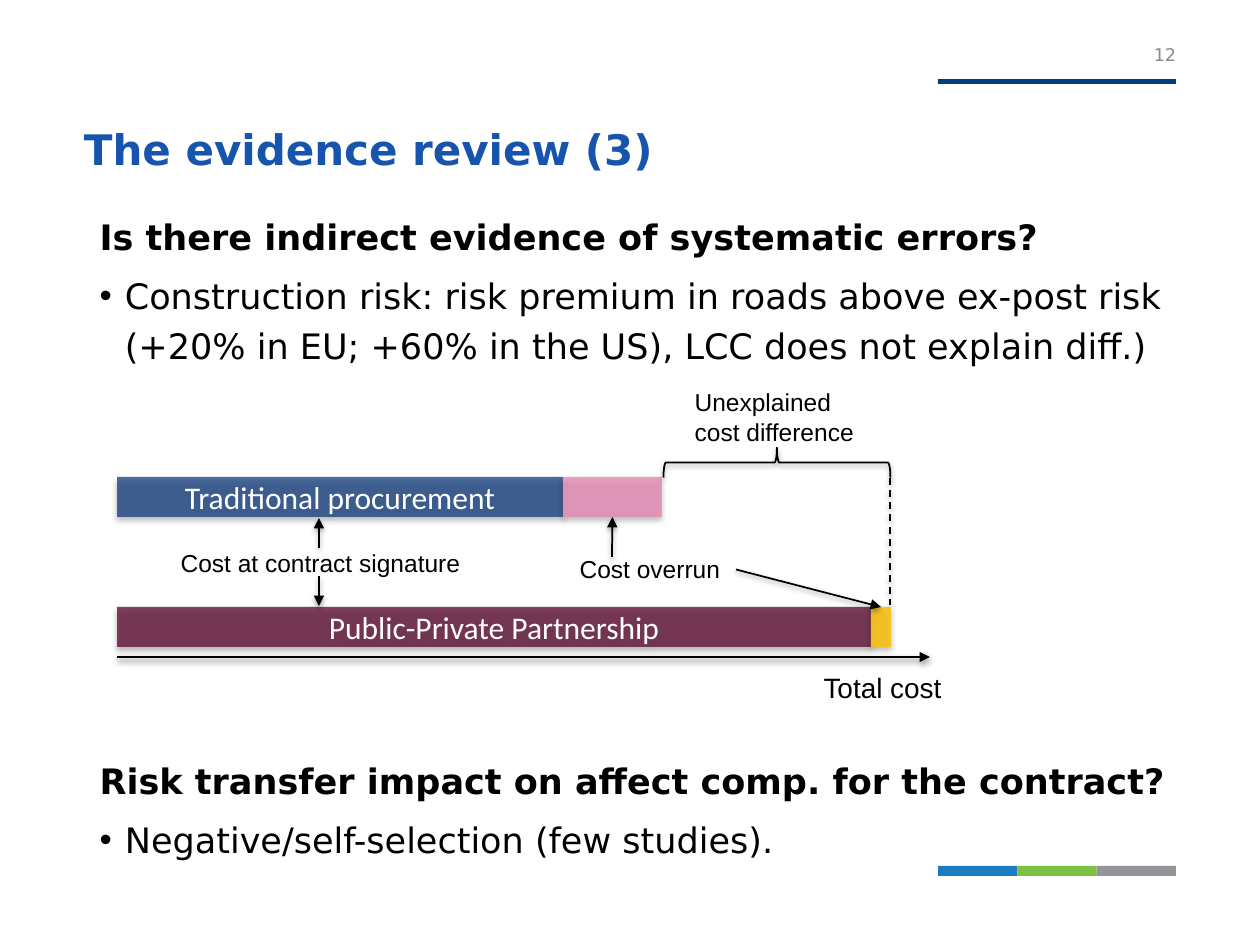
import pptx
import pptx.util
import pptx.dml.color
import pptx.enum.dml
import pptx.enum.shapes
import pptx.enum.text
import pptx.oxml
import pptx.oxml.ns

PX = 914400 // 126
COLORS = {
    "title": "1754AD", "text": "000000", "number": "898989", "white": "FFFFFF",
    "navy": "003E7E", "blue": "1C7CC2", "green": "7BC042", "grey": "939598",
    "traditional": "113D7E", "overrun": "E68BB5", "partnership": "621538", "gold": "FFC000",
}
HEADING_FONT, LABEL_FONT, BAR_FONT = "DejaVu Sans", "Arial", "Calibri"

TITLE = "The evidence review (3)"
PAGE_NUMBER = "12"
SECTIONS = [
    (197, 180, "Is there indirect evidence of systematic errors?",
     "Construction risk: risk premium in roads above ex-post risk (+20% in EU; +60% in the US), "
     "LCC does not explain diff.)"),
    (741, 125, "Risk transfer impact on affect comp. for the contract?",
     "Negative/self-selection (few studies)."),
]
BAR_LEFT, BAR_HEIGHT = 117, 40
BARS = [
    (477, [("traditional", 75, 446, "Traditional procurement"), ("overrun", 80, 99, "")]),
    (607, [("partnership", 80, 754, "Public-Private Partnership"), ("gold", 80, 20, "")]),
]
LABELS = [
    ("Total cost", 811, 664, 195, 47, 16),
    ("Cost overrun", 567, 548, 169, 43, 14),
    ("Cost at contract signature", 168, 542, 306, 43, 14),
    ("Unexplained cost difference", 682, 381, 197, 72, 14),
]
ARROWS = [
    (117, 657, 930, 657, 1.5),
    (319, 548, 319, 518, 1),
    (319, 576, 319, 606, 1),
]
FOOTER_STRIPES = ["blue", "green", "grey"]

Shapes = pptx.enum.shapes.MSO_SHAPE
Align = pptx.enum.text.PP_ALIGN
Anchor = pptx.enum.text.MSO_ANCHOR


def px(*values):
    return [round(value * PX) for value in values]


def rgb(name):
    return pptx.dml.color.RGBColor.from_string(COLORS[name])


def add_xml(parent, markup):
    head, rest = markup.split(" ", 1)
    element = pptx.oxml.parse_xml(f"{head} {pptx.oxml.ns.nsdecls('a')} {rest}")
    parent.append(element)


def add_shadow(item, blur, distance, alpha):
    properties = item._element.spPr
    for effect in properties.findall(pptx.oxml.ns.qn("a:effectLst")):
        properties.remove(effect)
    add_xml(properties, f'<a:effectLst ><a:outerShdw blurRad="{round(blur * 12700)}" '
            f'dist="{round(distance * 12700)}" dir="5400000" rotWithShape="0">'
            f'<a:srgbClr val="{COLORS["text"]}"><a:alpha val="{alpha * 1000}"/></a:srgbClr>'
            '</a:outerShdw></a:effectLst>')


def style(para, size, font, color, bold=False):
    for span in para.runs:
        span.font.size = pptx.util.Pt(size)
        span.font.name = font
        span.font.bold = bold
        span.font.color.rgb = rgb(color)


def add_text(page, text, place, size, font, color, anchor=Anchor.TOP, insets=(0, 0, 0, 0), bold=False):
    box = page.shapes.add_textbox(*px(*place))
    frame = box.text_frame
    frame.word_wrap = True
    frame.vertical_anchor = anchor
    (frame.margin_left, frame.margin_top, frame.margin_right, frame.margin_bottom) = px(*insets)
    frame.text = text
    style(frame.paragraphs[0], size, font, color, bold)
    return box


def add_rectangle(page, color, *place):
    shape = page.shapes.add_shape(Shapes.RECTANGLE, *px(*place))
    shape.shadow.inherit = False
    shape.fill.solid()
    shape.fill.fore_color.rgb = rgb(color)
    shape.line.fill.background()
    return shape


def add_bar(page, color, alpha, text, *place):
    bar = add_rectangle(page, color, *place)
    fill = bar._element.spPr.find(pptx.oxml.ns.qn("a:solidFill"))
    add_xml(fill[0], f'<a:alpha val="{alpha * 1000}"/>')
    add_shadow(bar, 3.5, 2.2, 32)
    if text:
        bar.text_frame.text = text
        bar.text_frame.vertical_anchor = Anchor.MIDDLE
        para = bar.text_frame.paragraphs[0]
        para.alignment = Align.CENTER
        style(para, 18, BAR_FONT, "white")
    return bar


def add_line(page, x1, y1, x2, y2, width=1, arrow=True):
    line = page.shapes.add_connector(pptx.enum.shapes.MSO_CONNECTOR.STRAIGHT, *px(x1, y1, x2, y2))
    line.line.color.rgb = rgb("text")
    line.line.width = pptx.util.Pt(width)
    if arrow:
        add_xml(line.line._get_or_add_ln(), '<a:tailEnd type="triangle"/>')
    else:
        line.line.dash_style = pptx.enum.dml.MSO_LINE.DASH
    add_shadow(line, 3.1, 1.6, 38)
    return line


def add_section(page, top, height, heading, bullet):
    box = add_text(page, heading, (87, top, 1090, height), 20, HEADING_FONT, "text",
                   insets=(0, 10, 0, 0), bold=True)
    first = box.text_frame.paragraphs[0]
    first._p.get_or_add_pPr().set("marL", str(px(12.6)[0]))
    para = box.text_frame.add_paragraph()
    para.text = bullet
    properties = para._p.get_or_add_pPr()
    properties.set("marL", str(px(37.8)[0]))
    properties.set("indent", str(px(-25.2)[0]))
    add_xml(properties, '<a:buFont typeface="Arial"/>')
    add_xml(properties, '<a:buChar char="•"/>')
    para.space_before = pptx.util.Pt(5)
    style(para, 20, HEADING_FONT, "text")
    for item in box.text_frame.paragraphs:
        item.line_spacing = 1.2


def main():
    deck = pptx.Presentation()
    deck.slide_width, deck.slide_height = pptx.util.Inches(10), pptx.util.Inches(7.5)
    page = deck.slides.add_slide(deck.slide_layouts[6])

    add_rectangle(page, "navy", 938, 79, 238, 5)
    for index, color in enumerate(FOOTER_STRIPES):
        add_rectangle(page, color, 938 + index * 79.33, 866, 79.33, 10)
    add_text(page, TITLE, (84, 45, 1090, 139), 24, HEADING_FONT, "title",
             Anchor.BOTTOM, (0, 0, 0, 10), True)
    for section in SECTIONS:
        add_section(page, *section)
    number = add_text(page, PAGE_NUMBER, (1114, 15, 62, 50), 10, HEADING_FONT, "number", Anchor.BOTTOM)
    number.text_frame.paragraphs[0].alignment = Align.RIGHT

    bars = {}
    for top, parts in BARS:
        left = BAR_LEFT
        for color, alpha, width, text in parts:
            bars[color] = add_bar(page, color, alpha, text, left, top, width, BAR_HEIGHT)
            left += width

    labels = {}
    for text, left, top, width, height, size in LABELS:
        labels[text] = add_text(page, text, (left, top, width, height), size, LABEL_FONT, "text",
                                insets=(12.6, 6.3, 12.6, 6.3))

    brace = page.shapes.add_shape(Shapes.RIGHT_BRACE, *px(762, 349, 30, 227))
    brace.rotation = 270
    brace.fill.background()
    brace.line.color.rgb = rgb("text")
    brace.line.width = pptx.util.Pt(1)
    add_shadow(brace, 3.1, 1.6, 38)
    add_line(page, 890, 478, 890, 605, arrow=False)

    for arrow in ARROWS:
        add_line(page, *arrow)
    add_line(page, 612, 557, 612, 517).end_connect(bars["overrun"], 2)
    pointer = add_line(page, 736, 569, 881, 607)
    pointer.begin_connect(labels["Cost overrun"], 3)
    pointer.end_connect(bars["gold"], 0)
    deck.save("out.pptx")


if __name__ == "__main__":
    main()
